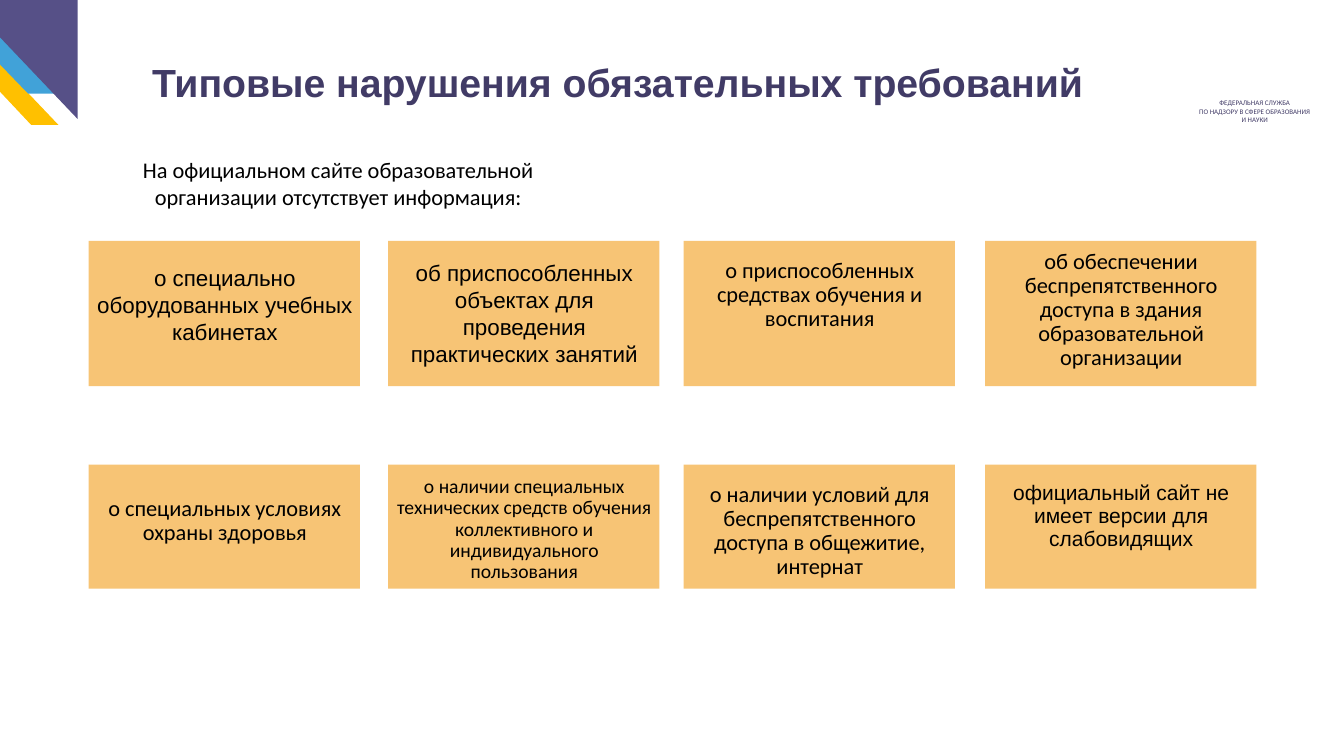
"""Build a slide of typical breaches on school web sites."""

from dataclasses import dataclass

from pptx import Presentation
from pptx.dml.color import RGBColor
from pptx.enum.shapes import MSO_SHAPE
from pptx.enum.text import MSO_ANCHOR, MSO_AUTO_SIZE, PP_ALIGN
from pptx.text.text import TextFrame
from pptx.util import Pt

PX = 9144
RECT = MSO_SHAPE.RECTANGLE
TOP = MSO_ANCHOR.TOP
FIXED = MSO_AUTO_SIZE.NONE
CENTER = PP_ALIGN.CENTER

BLACK = RGBColor(0x00, 0x00, 0x00)
INDIGO = RGBColor(0x41, 0x3B, 0x66)
PURPLE = RGBColor(0x56, 0x50, 0x87)
BLUE = RGBColor(0x41, 0xA2, 0xD8)
GOLD = RGBColor(0xFF, 0xC0, 0x00)
SAND = RGBColor(0xF7, 0xC4, 0x75)

LEFTS = (88, 385, 678, 977)
ROWS = ((239, 144), (461, 123))
WIDTH = 269


@dataclass
class Card:
    """Text of a card with its top inset and format."""

    text: str
    inset: int
    font: str = "Calibri"
    size: int = 16
    line: float = 0.9


@dataclass
class Band:
    """Coloured outline in the corner."""

    color: RGBColor
    points: tuple[tuple[int, int], ...]


CARDS = (
    Card("о специально оборудованных учебных кабинетах", 23, "Arial", line=1.0),
    Card("об приспособленных объектах для проведения практических занятий", 18, "Arial", line=1.0),
    Card("о приспособленных средствах обучения и воспитания", 18),
    Card("об обеспечении беспрепятственного доступа в здания образовательной организации", 9),
    Card("о специальных условиях охраны здоровья", 32),
    Card("о наличии специальных технических средств обучения коллективного и индивидуального пользования", 12, size=14),
    Card("о наличии условий для беспрепятственного доступа в общежитие, интернат", 18),
    Card("официальный сайт не имеет версии для слабовидящих", 18, "Arial", 15),
)

BANDS = (
    Band(GOLD, ((0, 63), (58, 124), (31, 124), (0, 91))),
    Band(BLUE, ((0, 35), (55, 93), (28, 93), (0, 64))),
    Band(PURPLE, ((0, 0), (77, 0), (77, 118), (0, 37))),
)


def write(frame: TextFrame, text: str, *, font: str = "Calibri", size: int = 16,
          color: RGBColor = BLACK, bold: bool = False, line: float = 1.0,
          inset: tuple[int, int, int, int] = (0, 0, 0, 0)) -> None:
    """Fill a frame with centred text, one paragraph per line."""
    frame.text = text
    frame.word_wrap = True
    frame.auto_size = FIXED
    frame.vertical_anchor = TOP
    (frame.margin_left, frame.margin_top,
     frame.margin_right, frame.margin_bottom) = (side * PX for side in inset)
    for para in frame.paragraphs:
        para.alignment = CENTER
        para.line_spacing = line
        para.font.name = font
        para.font.size = Pt(size)
        para.font.bold = bold
        para.font.color.rgb = color


def paint(shape, color: RGBColor) -> None:
    """Give a shape a plain fill with no line or shadow."""
    shape.shadow.inherit = False
    shape.fill.solid()
    shape.fill.fore_color.rgb = color
    shape.line.fill.background()


def add_band(slide, band: Band) -> None:
    """Draw one band of the corner."""
    first, *rest = band.points
    pen = slide.shapes.build_freeform(*first, scale=PX)
    pen.add_line_segments(rest, close=True)
    paint(pen.convert_to_shape(), band.color)


def add_card(slide, card: Card, left: int, top: int, height: int) -> None:
    """Draw one card with its text."""
    box = slide.shapes.add_shape(RECT, left * PX, top * PX, WIDTH * PX, height * PX)
    paint(box, SAND)
    write(box.text_frame, card.text, font=card.font, size=card.size,
          line=card.line, inset=(7, card.inset, 6, 0))


def add_label(slide, left: int, top: int, width: int, height: int) -> TextFrame:
    """Add a text box and return its frame."""
    box = slide.shapes.add_textbox(left * PX, top * PX, width * PX, height * PX)
    return box.text_frame


def main() -> None:
    """Build and save the deck."""
    deck = Presentation()
    deck.slide_width, deck.slide_height = 1333 * PX, 750 * PX
    slide = deck.slides.add_slide(deck.slide_layouts[5])
    for band in BANDS:
        add_band(slide, band)
    write(add_label(slide, 1177, 93, 135, 35),
          "ФЕДЕРАЛЬНАЯ СЛУЖБА\nПО НАДЗОРУ В СФЕРЕ ОБРАЗОВАНИЯ И НАУКИ",
          size=5, color=INDIGO, inset=(10, 5, 10, 5))

    title = slide.shapes.title
    title.left, title.top, title.width, title.height = (
        side * PX for side in (88, 53, 1049, 57))
    write(title.text_frame, "Типовые нарушения обязательных требований",
          font="Arial", size=28, color=INDIGO, bold=True, inset=(10, 5, 10, 5))

    spots = [(left, top, height) for top, height in ROWS for left in LEFTS]
    for card, spot in zip(CARDS, spots):
        add_card(slide, card, *spot)
    write(add_label(slide, 88, 155, 495, 58),
          "На официальном сайте образовательной организации отсутствует информация:")
    deck.save("out.pptx")


if __name__ == "__main__":
    main()
